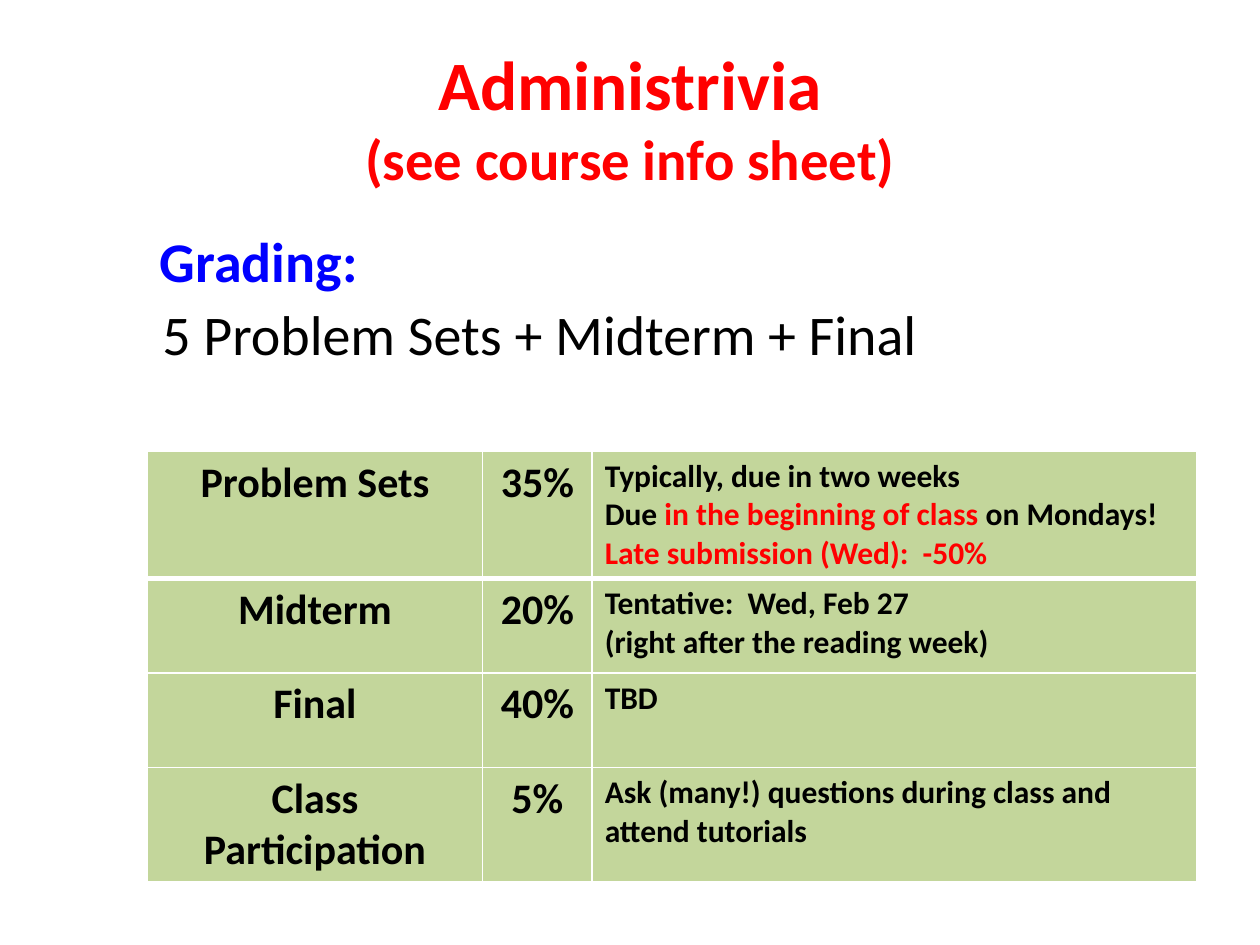
"""Build the course administrivia slide with its grading table."""
from lxml import etree
from pptx import Presentation
from pptx import util as u
from pptx.dml.color import RGBColor
from pptx.enum import text
from pptx.oxml.ns import qn

THEME = {
    "font": "Calibri",
    "red": "FF0000", "blue": "0000FF", "black": "000000",
    "cell": "C3D69B", "border": "FFFFFF",
    "title": 39.6, "subtitle": 32.4, "body": 32, "label": 24, "note": 18,
    "thin": 1, "thick": 3,
}

TITLE = [("Administrivia", "title"), ("(see course info sheet)", "subtitle")]
INTRO = [
    ("Grading:", "blue", True, (1.17, 1.75, 2.25, 0.67)),
    ("5 Problem Sets + Midterm + Final", "black", False, (1.19, 2.33, 8.81, 0.67)),
]
GRADING = [
    ("Problem Sets", "35%", [
        [("Typically, due in two weeks", "black")],
        [("Due ", "black"), ("in the beginning of class ", "red"), ("on Mondays!", "black")],
        [("Late submission (Wed):  -50%", "red")],
    ]),
    ("Midterm", "20%", [
        [("Tentative:  Wed, Feb 27", "black")],
        [("(right after the reading week)", "black")],
    ]),
    ("Final", "40%", [[("TBD", "black")]]),
    ("Class Participation", "5%", [
        [("Ask (many!) questions during class and attend tutorials", "black")],
    ]),
]
TABLE_ORIGIN = (1.17, 3.58)
COLUMN_WIDTHS = (2.66, 0.87, 4.8)
ROW_HEIGHTS = (1.01, 0.75, 0.75, 0.91)


def add_run(paragraph, wording, size, color, bold=True):
    run = paragraph.add_run()
    run.text = wording
    run.font.name = THEME["font"]
    run.font.size = u.Pt(THEME[size])
    run.font.bold = bold
    run.font.color.rgb = RGBColor.from_string(THEME[color])


def style_cell(cell, row_index):
    properties = cell._tc.get_or_add_tcPr()
    weights = {
        "L": "thin", "R": "thin",
        "T": "thick" if row_index == 1 else "thin",
        "B": "thick" if row_index == 0 else "thin",
    }
    for side, weight in weights.items():
        border = etree.SubElement(properties, qn(f"a:ln{side}"), w=str(u.Pt(THEME[weight])))
        fill = etree.SubElement(border, qn("a:solidFill"))
        etree.SubElement(fill, qn("a:srgbClr"), val=THEME["border"])
    cell.fill.solid()
    cell.fill.fore_color.rgb = RGBColor.from_string(THEME["cell"])


def fill_cell(cell, lines, size, align):
    frame = cell.text_frame
    for index, line in enumerate(lines):
        paragraph = frame.add_paragraph() if index else frame.paragraphs[0]
        paragraph.alignment = align
        for wording, color in line:
            add_run(paragraph, wording, size, color)


def add_title(slide):
    heading = slide.shapes.title
    heading.left, heading.top, heading.width, heading.height = map(u.Inches, (0.5, 0.3, 9, 1.25))
    frame = heading.text_frame
    frame.auto_size = text.MSO_AUTO_SIZE.NONE
    frame.vertical_anchor = text.MSO_ANCHOR.MIDDLE
    paragraph = frame.paragraphs[0]
    paragraph.alignment = text.PP_ALIGN.CENTER
    for index, (wording, size) in enumerate(TITLE):
        if index:
            paragraph.add_line_break()
        add_run(paragraph, wording, size, "red")


def add_intro(slide):
    for wording, color, bold, place in INTRO:
        frame = slide.shapes.add_textbox(*map(u.Inches, place)).text_frame
        frame.word_wrap = True
        paragraph = frame.paragraphs[0]
        paragraph.space_before = u.Pt(THEME["body"] * 0.2)
        add_run(paragraph, wording, "body", color, bold)


def add_grading(slide):
    extent = (sum(COLUMN_WIDTHS), sum(ROW_HEIGHTS))
    grading = slide.shapes.add_table(
        len(GRADING), len(COLUMN_WIDTHS), *map(u.Inches, TABLE_ORIGIN + extent)).table
    for column, width in zip(grading.columns, COLUMN_WIDTHS):
        column.width = u.Inches(width)
    for row_index, (item, weight, notes) in enumerate(GRADING):
        row = grading.rows[row_index]
        row.height = u.Inches(ROW_HEIGHTS[row_index])
        contents = [
            ([[(item, "black")]], "label", text.PP_ALIGN.CENTER),
            ([[(weight, "black")]], "label", text.PP_ALIGN.CENTER),
            (notes, "note", text.PP_ALIGN.LEFT),
        ]
        for cell, content in zip(row.cells, contents):
            style_cell(cell, row_index)
            fill_cell(cell, *content)


def main():
    deck = Presentation()
    deck.slide_width, deck.slide_height = u.Inches(10), u.Inches(7.5)
    slide = deck.slides.add_slide(deck.slide_layouts[5])
    add_title(slide)
    add_intro(slide)
    add_grading(slide)
    deck.save("out.pptx")


if __name__ == "__main__":
    main()
